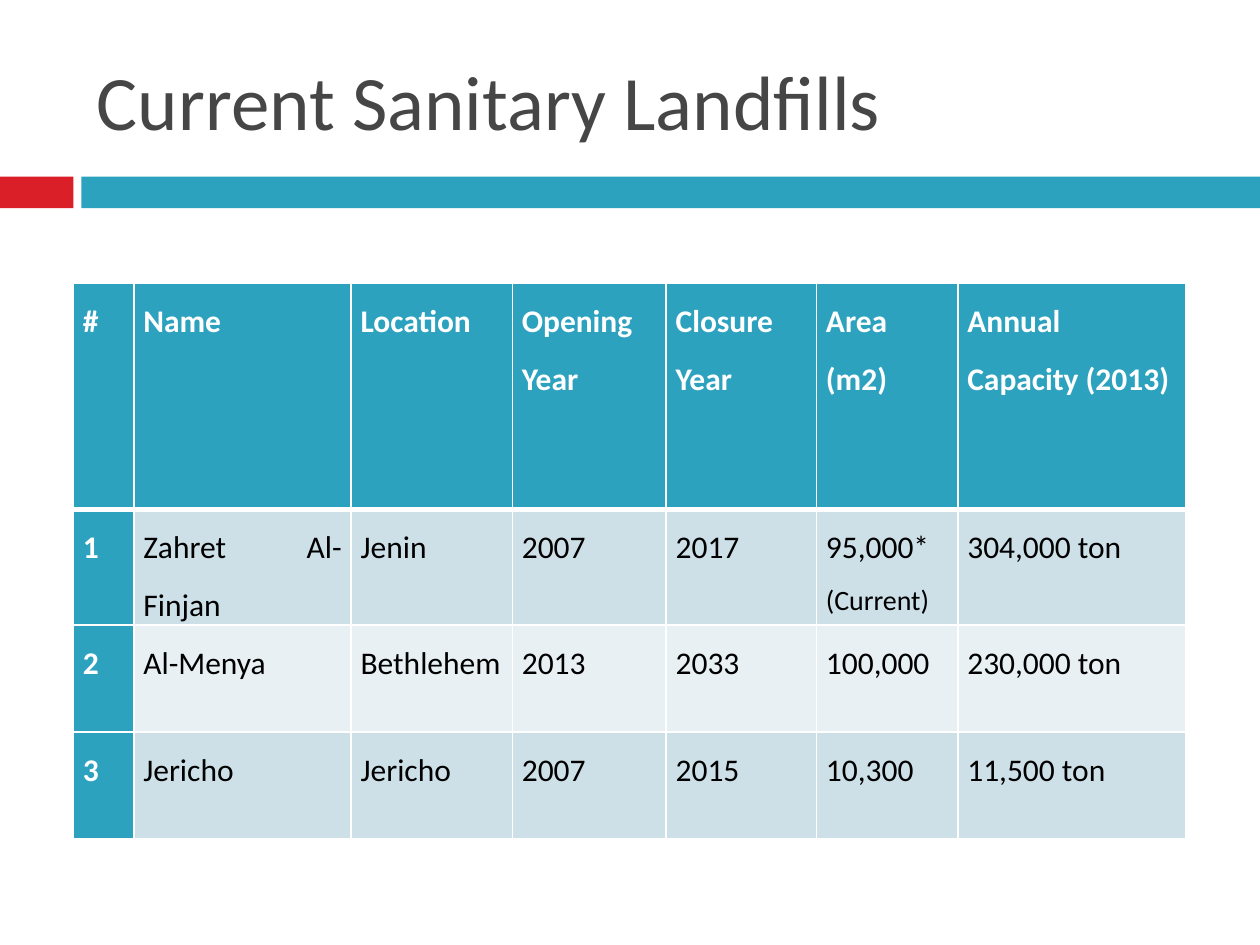
from lxml.etree import SubElement
from pptx import Presentation
from pptx.dml.color import RGBColor
from pptx.enum.shapes import MSO_SHAPE
from pptx.enum.text import MSO_ANCHOR, PP_ALIGN
from pptx.oxml.ns import qn
from pptx.util import Cm, Pt

COLORS = {
    "red": "DA1F28",
    "teal": "2DA2BF",
    "title": "464646",
    "band": "CDE0E8",
    "light": "E8F0F4",
    "white": "FFFFFF",
    "black": "000000",
}
COL_WIDTHS = [1.22, 4.38, 3.25, 3.1, 3.03, 2.85, 4.6]
ROW_HEIGHTS = [4.55, 2.16, 2.16, 2.16]
ROWS = [
    ["#", "Name", "Location", "Opening Year", "Closure Year", "Area\n(m2)",
     "Annual Capacity (2013)"],
    ["1", "Zahret Al-Finjan", "Jenin", "2007", "2017", "95,000*\n(Current)",
     "304,000 ton"],
    ["2", "Al-Menya", "Bethlehem", "2013", "2033", "100,000", "230,000 ton"],
    ["3", "Jericho", "Jericho", "2007", "2015", "10,300", "11,500 ton"],
]


def rgb(name):
    return RGBColor.from_string(COLORS[name])


def add_text(p, text, size=18, color="black", bold=False, align=PP_ALIGN.LEFT,
             spacing=1.0):
    p.alignment = align
    p.line_spacing = spacing
    r = p.add_run()
    r.text = text
    r.font.name = "Calibri"
    r.font.size = Pt(size)
    r.font.bold = bold
    r.font.color.rgb = rgb(color)


def add_bar(s, left, width, color):
    sp = s.shapes.add_shape(MSO_SHAPE.RECTANGLE, Cm(left), Cm(3.56), Cm(width), Cm(0.64))
    sp.shadow.inherit = False
    sp.fill.solid()
    sp.fill.fore_color.rgb = rgb(color)
    sp.line.fill.background()


def add_title(s, text):
    sp = s.shapes.title
    sp.left, sp.top, sp.width, sp.height = Cm(1.7), Cm(0.64), Cm(22.66), Cm(2.74)
    tf = sp.text_frame
    tf.vertical_anchor = MSO_ANCHOR.MIDDLE
    add_text(tf.paragraphs[0], text, size=44, color="title")


def set_borders(cell, **widths):
    tc_pr = cell._tc.get_or_add_tcPr()
    for side in "LRTB":
        ln = SubElement(tc_pr, qn(f"a:ln{side}"), w=str(Pt(widths.get(side, 1))))
        fill = SubElement(ln, qn("a:solidFill"))
        SubElement(fill, qn("a:srgbClr"), val=COLORS["white"])


def fill_cell(cell, text, row, col):
    heading = row == 0 or col == 0
    set_borders(cell, T=3 if row == 1 else 1, B=3 if row == 0 else 1)
    cell.fill.solid()
    cell.fill.fore_color.rgb = rgb("teal" if heading else "band" if row % 2 else "light")
    cell.margin_left = cell.margin_right = Cm(0.19)
    cell.margin_top = cell.margin_bottom = 0
    tf = cell.text_frame
    for i, line in enumerate(text.split("\n")):
        p = tf.add_paragraph() if i else tf.paragraphs[0]
        add_text(p, line, size=16 if line == "(Current)" else 18,
                 color="white" if heading else "black", bold=heading,
                 align=PP_ALIGN.JUSTIFY, spacing=1.5)


def add_landfill_table(s):
    table = s.shapes.add_table(
        len(ROWS), len(COL_WIDTHS), Cm(1.48), Cm(5.72),
        Cm(sum(COL_WIDTHS)), Cm(sum(ROW_HEIGHTS))).table
    for column, width in zip(table.columns, COL_WIDTHS):
        column.width = Cm(width)
    for row, height in zip(table.rows, ROW_HEIGHTS):
        row.height = Cm(height)
    for i, values in enumerate(ROWS):
        for j, text in enumerate(values):
            fill_cell(table.cell(i, j), text, i, j)


def main():
    prs = Presentation()
    prs.slide_width, prs.slide_height = Cm(25.4), Cm(19.05)
    s = prs.slides.add_slide(prs.slide_layouts[5])
    add_bar(s, 0, 1.48, "red")
    add_bar(s, 1.64, 23.76, "teal")
    add_title(s, "Current Sanitary Landfills")
    add_landfill_table(s)
    prs.save("out.pptx")


if __name__ == "__main__":
    main()
